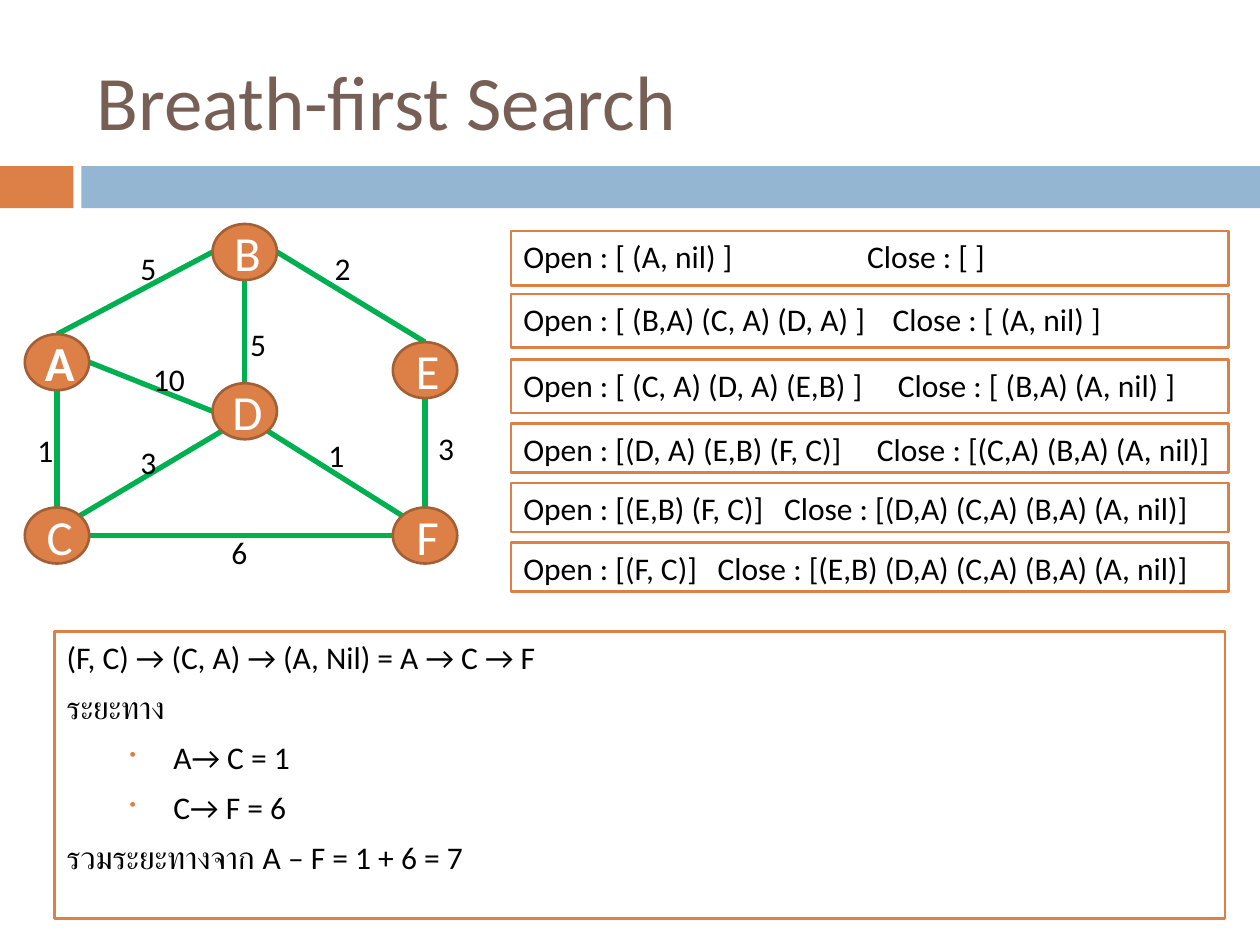
from lxml import etree
from pptx import Presentation
from pptx.dml.color import RGBColor
from pptx.enum.shapes import MSO_CONNECTOR, MSO_SHAPE
from pptx.enum.text import MSO_ANCHOR, PP_ALIGN
from pptx.oxml.ns import qn
from pptx.util import Pt

STRAIGHT = MSO_CONNECTOR.STRAIGHT
RECT, OVAL = MSO_SHAPE.RECTANGLE, MSO_SHAPE.OVAL
TOP, MIDDLE = MSO_ANCHOR.TOP, MSO_ANCHOR.MIDDLE
LEFT, CENTER = PP_ALIGN.LEFT, PP_ALIGN.CENTER
FONT = "Calibri"
COLORS = {
    "title": "775F55", "accent": "DD8047", "accent_dark": "A35F35",
    "band": "94B6D2", "edge": "00B050", "text": "000000", "white": "FFFFFF",
}
NODE_W, NODE_H = 36.8, 32
NODES = {
    "A": (0, 63), "B": (107.3, 0), "C": (0, 162),
    "D": (107.3, 91), "E": (210.3, 67.5), "F": (210.3, 162),
}
ANCHORS = {
    "top": (0.5, 0), "bottom": (0.5, 1), "left": (0, 0.5), "right": (1, 0.5),
    "lower left": (0.15, 0.85), "lower right": (0.85, 0.85),
    "upper left": (0.15, 0.15), "upper right": (0.85, 0.15),
}
EDGES = [
    ("A", "top", "B", "left", "5", 59, 10.8),
    ("B", "right", "E", "top", "2", 169.9, 10.8),
    ("E", "bottom", "F", "top", "3", 229, 113.8),
    ("C", "upper right", "D", "lower left", "3", 59, 121.7),
    ("A", "bottom", "C", "top", "1", 0, 114.5),
    ("D", "lower right", "F", "upper left", "1", 166.3, 117.4),
    ("B", "bottom", "D", "top", "5", 121.7, 54),
    ("C", "right", "F", "left", "6", 110.9, 172.8),
    ("A", "right", "D", "left", "10", 66.2, 74.2),
]
STEPS = [
    (0, 31, "[ (A, nil) ]", "[ ]", 196.5),
    (36, 30.5, "[ (B,A) (C, A) (D, A) ]", "[ (A, nil) ]", 211),
    (73.5, 30.5, "[ (C, A) (D, A) (E,B) ]", "[ (B,A) (A, nil) ]", 214),
    (110, 28, "[(D, A) (E,B) (F, C)]", "[(C,A) (B,A) (A, nil)]", 202),
    (144, 28, "[(E,B) (F, C)]", "[(D,A) (C,A) (B,A) (A, nil)]", 149),
    (178, 28, "[(F, C)]", "[(E,B) (D,A) (C,A) (B,A) (A, nil)]", 111),
]
ANSWER = [
    (0, "(F, C) → (C, A) → (A, Nil) = A → C → F"),
    (0, "ระยะทาง"),
    (1, "A→ C = 1"),
    (1, "C→ F = 6"),
    (0, "รวมระยะทางจาก A – F = 1 + 6 = 7"),
]


def rgb(name):
    return RGBColor.from_string(COLORS[name])


def style(paragraph, size, color, align=LEFT):
    paragraph.alignment = align
    paragraph.font.name = FONT
    paragraph.font.size = Pt(size)
    paragraph.font.color.rgb = rgb(color)


def add_block(slide, kind, left, top, width, height, fill, line=None):
    block = slide.shapes.add_shape(kind, Pt(left), Pt(top), Pt(width), Pt(height))
    block.shadow.inherit = False
    block.fill.solid()
    block.fill.fore_color.rgb = rgb(fill)
    if line:
        block.line.color.rgb = rgb(line)
        block.line.width = Pt(1.5)
    else:
        block.line.fill.background()
    return block


def add_panel(slide, left, top, width, height):
    frame = add_block(slide, RECT, left, top, width, height, "white", "accent").text_frame
    frame.word_wrap = True
    frame.vertical_anchor = TOP
    return frame


def add_heading(slide, left, top, width, height):
    title = slide.shapes.title
    title.left, title.top = Pt(left + 48), Pt(top + 18)
    title.width, title.height = Pt(642), Pt(78)
    title.text_frame.text = "Breath-first Search"
    title.text_frame.vertical_anchor = MIDDLE
    style(title.text_frame.paragraphs[0], 44, "title", LEFT)
    band_top = top + height - 24
    add_block(slide, RECT, left, band_top, 42, 24, "accent")
    add_block(slide, RECT, left + 46.5, band_top, width - 46.5, 24, "band")


def add_graph(slide, left, top):
    def anchor(node, side):
        x, y = NODES[node]
        across, down = ANCHORS[side]
        return Pt(left + x + across * NODE_W), Pt(top + y + down * NODE_H)

    for start, start_side, end, end_side, cost, x, y in EDGES:
        edge = slide.shapes.add_connector(
            STRAIGHT, *anchor(start, start_side), *anchor(end, end_side))
        edge.line.color.rgb = rgb("edge")
        edge.line.width = Pt(3)
        etree.SubElement(edge._element.spPr, qn("a:effectLst"))
        label = slide.shapes.add_textbox(
            Pt(left + x), Pt(top + y), Pt(16 + 10 * len(cost)), Pt(26))
        label.text_frame.word_wrap = True
        label.text_frame.text = cost
        style(label.text_frame.paragraphs[0], 18, "text")

    for name, (x, y) in NODES.items():
        node = add_block(slide, OVAL, left + x, top + y, NODE_W, NODE_H,
                         "accent", "accent_dark")
        frame = node.text_frame
        frame.margin_left, frame.margin_right = Pt(3), Pt(0)
        frame.word_wrap = False
        frame.vertical_anchor = MIDDLE
        frame.text = name
        style(frame.paragraphs[0], 28, "white", CENTER)
        frame.paragraphs[0].font.bold = name == "A"


def add_steps(slide, left, top, width):
    for y, height, opened, closed, tab in STEPS:
        frame = add_panel(slide, left, top + y, width, height)
        paragraph = frame.paragraphs[0]
        paragraph.add_run().text = f"Open : {opened}\tClose : {closed}"
        style(paragraph, 18, "text")
        paragraph.space_before = Pt(7)
        props = paragraph._p.get_or_add_pPr()
        stops = etree.Element(qn("a:tabLst"))
        etree.SubElement(stops, qn("a:tab"), pos=str(Pt(tab)), algn="l")
        props.find(qn("a:defRPr")).addprevious(stops)


def add_answer(slide, left, top, width, height):
    frame = add_panel(slide, left, top, width, height)
    for index, (level, text) in enumerate(ANSWER):
        paragraph = frame.add_paragraph() if index else frame.paragraphs[0]
        paragraph.text = text
        paragraph.level = level
        paragraph.space_before = Pt(7)
        style(paragraph, 18, "text")
        props = paragraph._p.get_or_add_pPr()
        props.set("marL", str(Pt(25 + 36 * level)))
        props.set("indent", str(Pt(-25)))
        if level:
            bullet_color = etree.Element(qn("a:buClr"))
            etree.SubElement(bullet_color, qn("a:srgbClr"), val=COLORS["accent"])
            bullet_size = etree.Element(qn("a:buSzPct"), val="60000")
            bullet = etree.Element(qn("a:buChar"), char="•")
            for part in (bullet_color, bullet_size, bullet):
                props.find(qn("a:defRPr")).addprevious(part)


def main():
    deck = Presentation()
    deck.slide_width, deck.slide_height = Pt(720), Pt(540)
    slide = deck.slides.add_slide(deck.slide_layouts.get_by_name("Title Only"))
    add_heading(slide, 0, 0, 720, 119)
    add_graph(slide, 14.2, 128)
    add_steps(slide, 292, 132, 410)
    add_answer(slide, 31, 361, 669, 164)
    deck.save("out.pptx")


if __name__ == "__main__":
    main()
